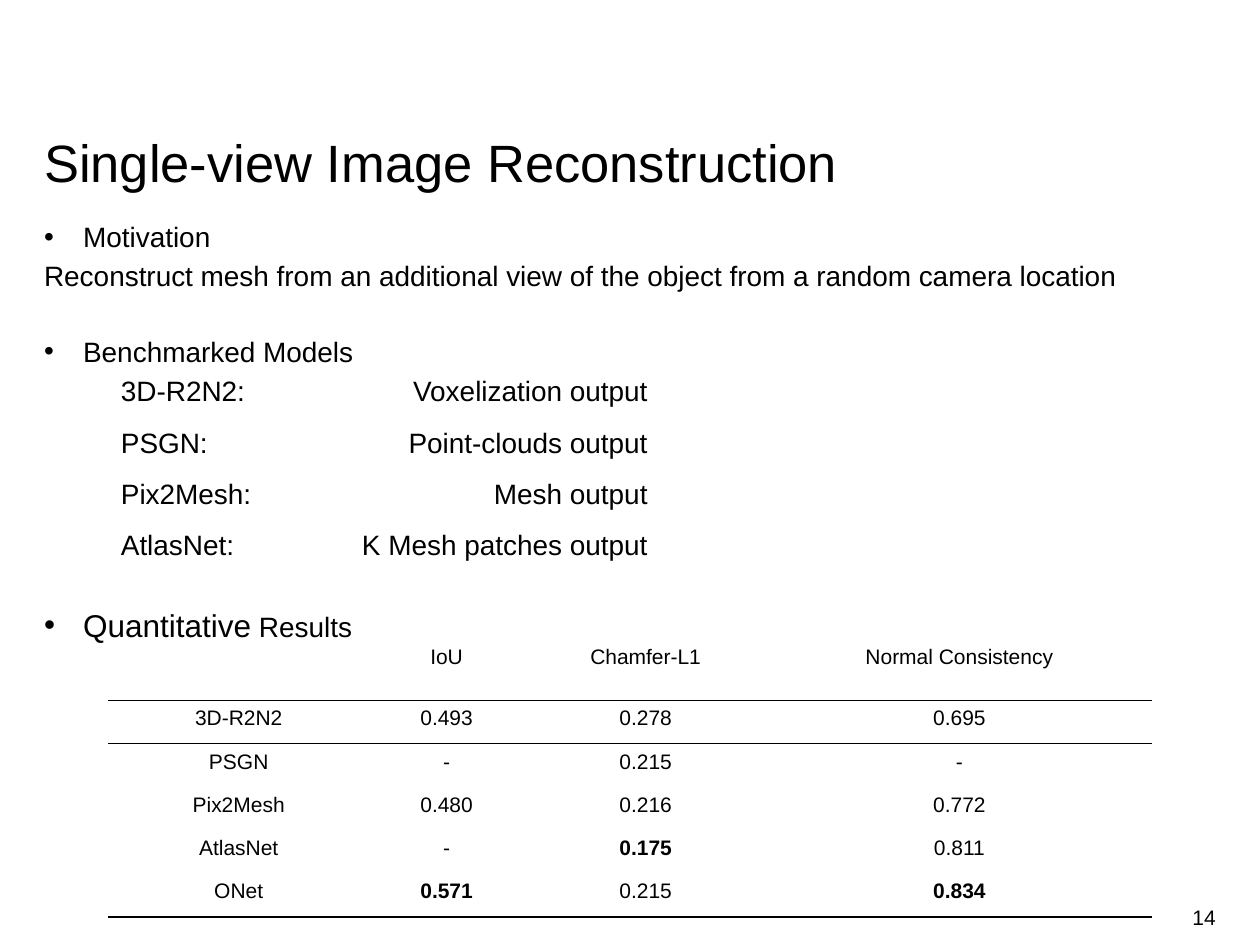
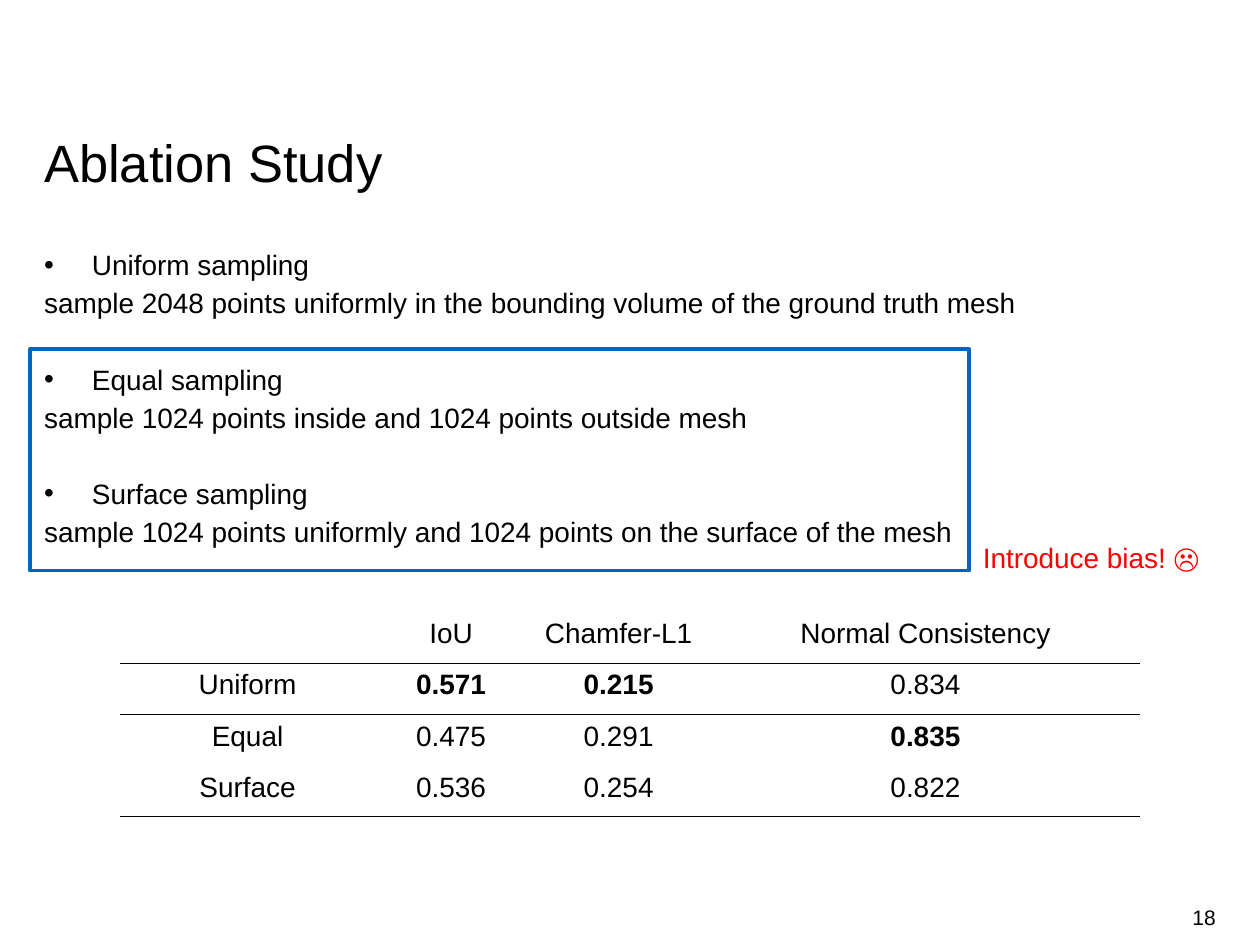
from lxml.etree import SubElement
from pptx import Presentation
from pptx.dml.color import RGBColor
from pptx.enum.shapes import MSO_SHAPE
from pptx.enum.text import MSO_ANCHOR, MSO_AUTO_SIZE, PP_ALIGN
from pptx.oxml import parse_xml
from pptx.oxml.ns import nsdecls, qn
from pptx.util import Inches, Pt

# Shared look
COLOURS = {"text": "000000", "frame": "0065BD", "warning": "FF0000"}
FONT = "Arial"
WIDTH, HEIGHT = Inches(10), Inches(7.5)
MARGIN, CONTENT_WIDTH = 3.5, 93.1
TITLE_SIZE, HEADING_SIZE, BODY_SIZE, SMALL_SIZE = 30, 18, 16, 12
BODY_LEADING, HEADING_LEADING, TITLE_LEADING = 21.8, 24.6, 32
BODY_ROW = 5.41
PLAIN_TABLE_STYLE = "{2D5ABB26-0587-4C30-8999-92F81FD0307C}"


def area(left, top, width, height):
    """Turn percentages of the slide into a position and a size."""
    return (round(WIDTH * left / 100), round(HEIGHT * top / 100),
            round(WIDTH * width / 100), round(HEIGHT * height / 100))


def place(shape, *shares):
    shape.left, shape.top, shape.width, shape.height = area(*shares)


def style_span(span, size=BODY_SIZE, colour="text", bold=False):
    span.font.name = FONT
    span.font.size = Pt(size)
    span.font.bold = bold
    span.font.color.rgb = RGBColor.from_string(COLOURS[colour])


def style_para(para, size=BODY_SIZE, leading=BODY_LEADING, align=PP_ALIGN.LEFT,
               colour="text"):
    para.alignment = align
    para.space_before = Pt(0)
    para.line_spacing = Pt(leading)
    for span in para.runs:
        style_span(span, size, colour)


def prepare_frame(frame, anchor=MSO_ANCHOR.TOP):
    frame.word_wrap = True
    frame.auto_size = MSO_AUTO_SIZE.NONE
    frame.vertical_anchor = anchor
    frame.margin_left = frame.margin_right = 0
    frame.margin_top = frame.margin_bottom = 0


def set_bullet(para, indent):
    """Give the paragraph a hanging bullet, or none when indent is zero."""
    properties = para._p.get_or_add_pPr()
    properties.set("marL", str(Inches(indent)))
    properties.set("indent", str(-Inches(indent)))
    if indent:
        SubElement(properties, qn("a:buFont")).set("typeface", FONT)
        SubElement(properties, qn("a:buChar")).set("char", "•")
    else:
        SubElement(properties, qn("a:buNone"))


# Kinds of element
def add_label(page, text, shares, size, align=PP_ALIGN.LEFT, colour="text",
              anchor=MSO_ANCHOR.TOP, leading=BODY_LEADING):
    box = page.shapes.add_textbox(*area(*shares))
    prepare_frame(box.text_frame, anchor)
    para = box.text_frame.paragraphs[0]
    para.text = text
    style_para(para, size, leading, align, colour)


def add_page(deck, title, number):
    page = deck.slides.add_slide(deck.slide_layouts[1])
    heading = page.shapes.title
    place(heading, MARGIN, 14.53, CONTENT_WIDTH, 6)
    prepare_frame(heading.text_frame)
    heading.text_frame.text = title
    style_para(heading.text_frame.paragraphs[0], TITLE_SIZE, TITLE_LEADING)
    add_label(page, str(number), (74.1, 94.4, 22.4, 5.33), SMALL_SIZE,
              PP_ALIGN.RIGHT, anchor=MSO_ANCHOR.MIDDLE, leading=14)
    return page


def fill_body(page, top, height, indent, sections):
    """Write (heading, detail, space before) sections into the body."""
    body = page.placeholders[1]
    place(body, MARGIN, top, CONTENT_WIDTH, height)
    frame = body.text_frame
    prepare_frame(frame)
    lines = []
    for heading, detail, gap in sections:
        lines.append((heading, indent, gap))
        if detail:
            lines.append((detail, 0, 0))
    for index, (text, hanging, gap) in enumerate(lines):
        para = frame.add_paragraph() if index else frame.paragraphs[0]
        para.text = text
        set_bullet(para, hanging)
        style_para(para)
        para.space_before = Pt(gap)
    return frame


def add_rule(cell, points):
    """Draw a line under a table cell."""
    line = parse_xml(
        f'<a:lnB {nsdecls("a")} w="{Pt(points)}"><a:solidFill>'
        f'<a:srgbClr val="{COLOURS["text"]}"/></a:solidFill></a:lnB>')
    cell._tc.get_or_add_tcPr().insert(0, line)


def add_grid(page, left, top, columns, row_heights, rows, size, aligns,
             rules=None, bold=()):
    """Add a plain table; rules maps a row to the width of the line below it."""
    frame = page.shapes.add_table(
        len(rows), len(columns),
        *area(left, top, sum(columns), sum(row_heights)))
    table = frame.table
    table.first_row = table.horz_banding = False
    table._tbl.tblPr.find(qn("a:tableStyleId")).text = PLAIN_TABLE_STYLE
    for column, share in zip(table.columns, columns):
        column.width = round(WIDTH * share / 100)
    for row, share in zip(table.rows, row_heights):
        row.height = round(HEIGHT * share / 100)
    for row_index, texts in enumerate(rows):
        for column_index, text in enumerate(texts):
            cell = table.cell(row_index, column_index)
            cell.fill.background()
            cell.text = text
            para = cell.text_frame.paragraphs[0]
            para.alignment = aligns[column_index]
            for span in para.runs:
                style_span(span, size, bold=(row_index, column_index) in bold)
            if rules and row_index in rules:
                add_rule(cell, rules[row_index])


def add_frame(page, shares):
    box = page.shapes.add_shape(MSO_SHAPE.RECTANGLE, *area(*shares))
    box.shadow.inherit = False
    box.fill.background()
    box.line.color.rgb = RGBColor.from_string(COLOURS["frame"])
    box.line.width = Pt(2)


# Slides
METRICS = ["", "IoU", "Chamfer-L1", "Normal Consistency"]
CENTRED = [PP_ALIGN.CENTER] * len(METRICS)


def build_reconstruction(deck):
    page = add_page(deck, "Single-view Image Reconstruction", 14)
    frame = fill_body(page, 22.8, 66.13, 0.31, [
        ("Motivation", "Reconstruct mesh from an additional view of the object "
                       "from a random camera location", 0),
        ("Benchmarked Models", "", BODY_LEADING),
        ("Quantitative", "", 133),
    ])
    results = frame.paragraphs[-1]
    results.line_spacing = Pt(HEADING_LEADING)
    style_span(results.runs[0], HEADING_SIZE)
    span = results.add_run()
    span.text = " Results"
    style_span(span)

    scores = [
        METRICS,
        ["3D-R2N2", "0.493", "0.278", "0.695"],
        ["PSGN", "-", "0.215", "-"],
        ["Pix2Mesh", "0.480", "0.216", "0.772"],
        ["AtlasNet", "-", "0.175", "0.811"],
        ["ONet", "0.571", "0.215", "0.834"],
    ]
    add_grid(page, 8.6, 67.6, [20.7, 12.3, 19.3, 30.5], [6.53] + [4.58] * 5,
             scores, SMALL_SIZE, CENTRED, {0: 1, 1: 0.5, 5: 1},
             {(4, 2), (5, 1), (5, 3)})

    models = [
        ["3D-R2N2:", "Voxelization output"],
        ["PSGN:", "Point-clouds output"],
        ["Pix2Mesh:", "Mesh output"],
        ["AtlasNet:", "K Mesh patches output"],
    ]
    add_grid(page, 8.6, 39.2, [17.5, 26.3], [BODY_ROW] * len(models),
             models, BODY_SIZE, [PP_ALIGN.LEFT, PP_ALIGN.RIGHT])


def build_ablation(deck):
    page = add_page(deck, "Ablation Study", 18)
    add_frame(page, (2.4, 36.93, 74.5, 23.47))
    fill_body(page, 25.73, 68.53, 0.38, [
        ("Uniform sampling", "sample 2048 points uniformly in the bounding "
                             "volume of the ground truth mesh", 0),
        ("Equal sampling", "sample 1024 points inside and 1024 points "
                           "outside mesh", BODY_LEADING),
        ("Surface sampling", "sample 1024 points uniformly and 1024 points "
                             "on the surface of the mesh", BODY_LEADING),
    ])
    add_label(page, "Introduce bias! ☹", (78, 56.67, 17.5, 3.73), BODY_SIZE,
              colour="warning")
    scores = [
        METRICS,
        ["Uniform", "0.571", "0.215", "0.834"],
        ["Equal", "0.475", "0.291", "0.835"],
        ["Surface", "0.536", "0.254", "0.822"],
    ]
    add_grid(page, 9.5, 64.8, [20.3, 12, 14.6, 34.1], [BODY_ROW] * len(scores),
             scores, BODY_SIZE, CENTRED, {0: 1, 1: 1, 3: 1},
             {(1, 1), (1, 2), (2, 3)})


def main():
    deck = Presentation()
    deck.slide_width, deck.slide_height = WIDTH, HEIGHT
    build_reconstruction(deck)
    build_ablation(deck)
    deck.save("out.pptx")


if __name__ == "__main__":
    main()
